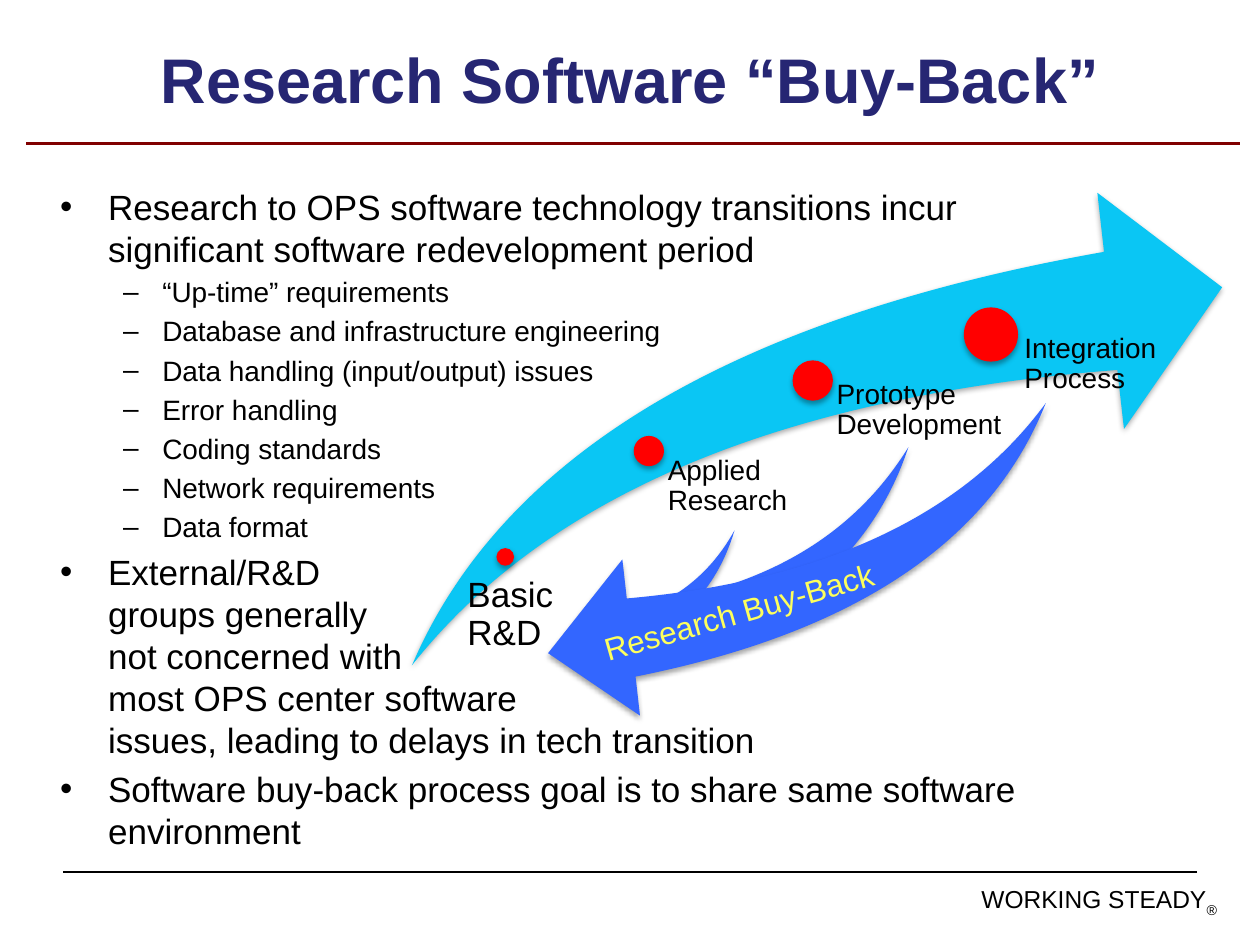
import pptx
import pptx.util
import pptx.dml.color
import pptx.enum.shapes
import pptx.enum.text
import pptx.oxml.ns
from lxml import etree

Inches = pptx.util.Inches
Pt = pptx.util.Pt
RGB = pptx.dml.color.RGBColor
SHAPE = pptx.enum.shapes.MSO_SHAPE
ALIGN = pptx.enum.text.PP_ALIGN
ANCHOR = pptx.enum.text.MSO_ANCHOR
qn = pptx.oxml.ns.qn

BLACK = RGB(0x00, 0x00, 0x00)
NAVY = RGB(0x26, 0x26, 0x73)
MAROON = RGB(0x80, 0x00, 0x00)
CYAN = RGB(0x0A, 0xC6, 0xF4)
BLUE = RGB(0x33, 0x66, 0xFF)
RED = RGB(0xFF, 0x00, 0x00)
YELLOW = RGB(0xFD, 0xFF, 0x5D)

PAD = (0.1, 0.05, 0.1, 0.05)


class Deck:
    font = "Arial"

    def __init__(self, wide, high):
        self.file = pptx.Presentation()
        self.file.slide_width = Inches(wide)
        self.file.slide_height = Inches(high)
        self.slide = self.file.slides.add_slide(self.file.slide_layouts[6])

    def box(self, place, pad=PAD, wrap=True):
        shape = self.slide.shapes.add_textbox(*map(Inches, place))
        frame = shape.text_frame
        frame.word_wrap = wrap
        (frame.margin_left, frame.margin_top,
         frame.margin_right, frame.margin_bottom) = map(Inches, pad)
        return shape

    def run(self, para, text, size, color=BLACK, bold=False):
        run = para.add_run()
        run.text = text
        font = run.font
        font.name, font.size, font.bold = self.font, Pt(size), bold
        font.color.rgb = color
        return run

    def bullet(self, para, mark, left, hang):
        props = para._p.get_or_add_pPr()
        props.set("marL", str(Inches(left)))
        props.set("indent", str(-Inches(hang)))
        face = etree.SubElement(props, qn("a:buFont"))
        face.set("typeface", self.font)
        etree.SubElement(props, qn("a:buChar")).set("char", mark)

    def line(self, start, end, color, width):
        line = self.slide.shapes.add_connector(
            pptx.enum.shapes.MSO_CONNECTOR.STRAIGHT,
            *map(Inches, start + end))
        line.line.color.rgb = color
        line.line.width = Pt(width)
        etree.SubElement(line._element.spPr, qn("a:effectLst"))

    def shape(self, kind, place, color):
        shape = self.slide.shapes.add_shape(kind, *map(Inches, place))
        shape.fill.solid()
        shape.fill.fore_color.rgb = color
        shape.line.fill.background()
        self.shade(shape)
        return shape

    def shade(self, shape):
        shape.shadow.inherit = False
        effects = shape._element.spPr.find(qn("a:effectLst"))
        outer = etree.SubElement(effects, qn("a:outerShdw"))
        for key, value in (("blurRad", Pt(3.1)), ("dist", Pt(1.8)),
                           ("dir", 90 * 60000), ("rotWithShape", 0)):
            outer.set(key, str(value))
        tint = etree.SubElement(outer, qn("a:srgbClr"))
        tint.set("val", str(BLACK))
        etree.SubElement(tint, qn("a:alpha")).set("val", "35000")

    def swoosh(self, place, color, bend=0.25, flip=False):
        arrow = self.shape(SHAPE.SWOOSH_ARROW, place, color)
        arrow.adjustments[0] = 0.25
        arrow.adjustments[1] = bend
        if flip:
            frame = arrow._element.spPr.find(qn("a:xfrm"))
            frame.set("flipH", "1")
            frame.set("flipV", "1")


def main():
    deck = Deck(10, 7.5)

    # Footer and rules
    para = deck.box((6.81, 7.02, 2.85, 0.23), (0,) * 4).text_frame.paragraphs[0]
    para.alignment = ALIGN.RIGHT
    deck.run(para, "WORKING STEADY", 14)
    mark = deck.run(para, "®", 14)
    mark.font._element.set("baseline", "-25000")
    deck.line((9.5, 6.92), (0.5, 6.92), BLACK, 0.75)
    deck.line((0.21, 1.14), (9.84, 1.14), MAROON, 2)

    # Title
    frame = deck.box((0, 0, 10, 1.25)).text_frame
    frame.vertical_anchor = ANCHOR.MIDDLE
    para = frame.paragraphs[0]
    para.alignment = ALIGN.CENTER
    deck.run(para, "Research Software “Buy-Back”", 36, NAVY, True)

    # Bullet list: level, then lines parted by fixed breaks
    points = [
        (0, ["Research to OPS software technology transitions incur "
             "significant software redevelopment period"]),
        (1, ["“Up-time” requirements"]),
        (1, ["Database and infrastructure engineering"]),
        (1, ["Data handling (input/output) issues"]),
        (1, ["Error handling"]),
        (1, ["Coding standards"]),
        (1, ["Network requirements"]),
        (1, ["Data format"]),
        (0, ["External/R&D ", "groups generally ", "not concerned with ",
             "most OPS center software ",
             "issues, leading to delays in tech transition"]),
        (0, ["Software buy-back process goal is to share same software "
             "environment"]),
    ]
    styles = [("•", 0.38, 0.38, 20), ("–", 0.81, 0.31, 16)]
    frame = deck.box((0.38, 1.42, 8.2, 5.27)).text_frame
    for i, (level, lines) in enumerate(points):
        sign, left, hang, size = styles[level]
        para = frame.add_paragraph() if i else frame.paragraphs[0]
        para.level = level
        deck.bullet(para, sign, left, hang)
        if i:
            para.space_before = Pt(size * 0.2)
        for j, text in enumerate(lines):
            if j:
                para.add_line_break()
            deck.run(para, text, size)

    # Growth arrow with its stages: dot, label place, inset, text, size
    deck.swoosh((3.27, 1.53, 6.43, 3.75), CYAN)
    stages = [
        ((3.94, 4.35, 0.14), (3.64, 4.58, 1.03, 0.89), 0.07, "Basic R&D", 20),
        ((5.03, 3.46, 0.24), (5.17, 3.62, 1.26, 1.71), 0.13,
         "Applied Research", 16),
        ((6.29, 2.86, 0.32), (6.47, 3.02, 1.6, 2.32), 0.17,
         "Prototype Development", 16),
        ((7.65, 2.44, 0.43), (7.9, 2.65, 1.59, 2.69), 0.23,
         "Integration Process", 16),
    ]
    for (left, top, width), place, inset, text, size in stages:
        deck.shape(SHAPE.OVAL, (left, top, width, width), RED)
        para = deck.box(place, (inset, 0, 0, 0)).text_frame.paragraphs[0]
        para.line_spacing = 0.9
        deck.run(para, text, size)

    # Buy-back arrows
    for place, bend in (((4.42, 4.21, 1.41, 1.18), 0.25),
                        ((4.5, 3.55, 2.71, 2.03), 0.25),
                        ((4.35, 3.2, 3.95, 2.48), 0.277)):
        deck.swoosh(place, BLUE, round(bend, 2), True)
    label = deck.box((4.66, 4.65, 2.43, 0.4), wrap=False)
    label.rotation = 344.1
    deck.run(label.text_frame.paragraphs[0], "Research Buy-Back", 18, YELLOW)

    deck.file.save("out.pptx")


if __name__ == "__main__":
    main()
